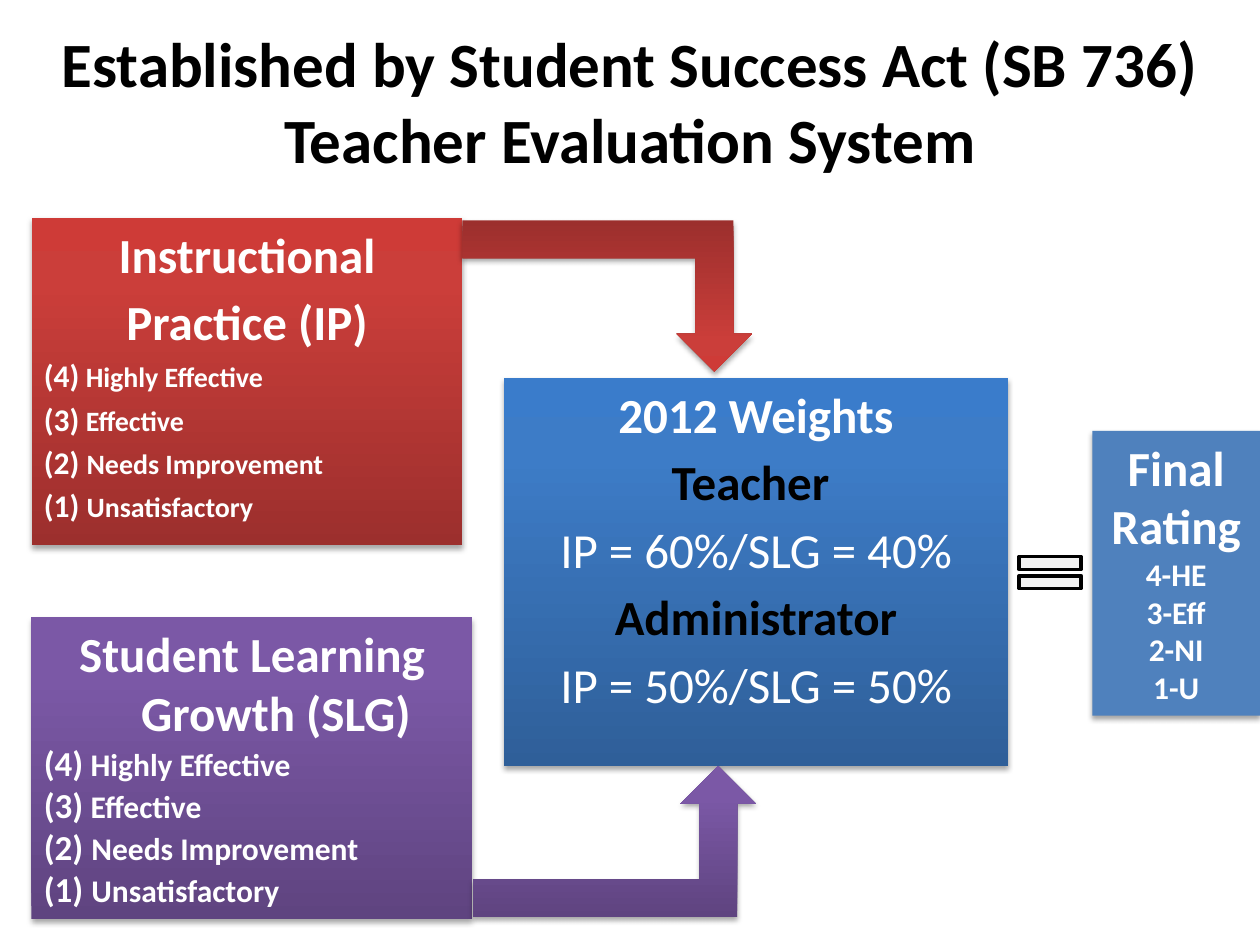
from lxml.etree import SubElement
from pptx import Presentation
from pptx.dml.color import RGBColor
from pptx.enum.shapes import MSO_SHAPE
from pptx.enum.text import MSO_ANCHOR, PP_ALIGN
from pptx.oxml.ns import qn
from pptx.util import Inches, Pt

COLORS = {
    "white": "FFFFFF",
    "black": "000000",
    "light": "F2F2F2",
    "steel": "4F81BD",
}
# Gradient stops from bottom to top
GRADIENTS = {
    "blue": ((0, "2F5F99"), (80, "3D7CC7"), (100, "3A7CCB")),
    "red": ((0, "9C2F2D"), (80, "CB3E3A"), (100, "CE3B37")),
    "purple": ((0, "5F4480"), (80, "7B58A6"), (100, "7C57A8")),
}
RATINGS = ("Highly Effective", "Effective", "Needs Improvement", "Unsatisfactory")


def color(name):
    return RGBColor.from_string(COLORS[name])


class SlideBuilder:
    font = "Calibri"
    hanging = Inches(0.38)
    spacing = 0.18  # space before, as a share of the text size

    def __init__(self, slide):
        self.slide = slide

    def run(self, paragraph, text, size, color_name="white", bold=True):
        run = paragraph.add_run()
        run.text = text
        run.font.name = self.font
        run.font.size = Pt(size)
        run.font.bold = bold
        run.font.color.rgb = color(color_name)

    def title(self, lines, left, top, width, height):
        title = self.slide.shapes.title
        title.left, title.top = Inches(left), Inches(top)
        title.width, title.height = Inches(width), Inches(height)
        title.text_frame.vertical_anchor = MSO_ANCHOR.MIDDLE
        paragraph = title.text_frame.paragraphs[0]
        paragraph.alignment = PP_ALIGN.CENTER
        for index, line in enumerate(lines):
            if index:
                paragraph.add_line_break()
            self.run(paragraph, line, 36, "black")

    def shape(self, kind, left, top, width, height, fill, outline=None):
        shape = self.slide.shapes.add_shape(
            kind, Inches(left), Inches(top), Inches(width), Inches(height))
        if fill in GRADIENTS:
            self.gradient(shape, GRADIENTS[fill])
        else:
            shape.fill.solid()
            shape.fill.fore_color.rgb = color(fill)
        shape.shadow.inherit = False
        if outline:
            shape.line.color.rgb = color(outline)
            shape.line.width = Pt(2)
        else:
            shape.line.fill.background()
            self.shadow(shape)
        return shape

    def gradient(self, shape, stops):
        shape.fill.gradient()
        shape.fill.gradient_angle = 90
        stop_list = next(shape._element.spPr.iter(qn("a:gsLst")))
        for stop in list(stop_list):
            stop_list.remove(stop)
        for position, value in stops:
            stop = SubElement(stop_list, qn("a:gs"), pos=str(position * 1000))
            SubElement(stop, qn("a:srgbClr"), val=value)

    def shadow(self, shape):
        effects = shape._element.spPr.find(qn("a:effectLst"))
        outer = SubElement(effects, qn("a:outerShdw"), blurRad=str(Pt(3.1)),
                           dist=str(Pt(1.8)), dir="5400000", rotWithShape="0")
        shade = SubElement(outer, qn("a:srgbClr"), val=COLORS["black"])
        SubElement(shade, qn("a:alpha"), val="35000")

    def box(self, left, top, width, height, fill):
        shape = self.shape(MSO_SHAPE.RECTANGLE, left, top, width, height, fill)
        shape.text_frame.word_wrap = True
        shape.text_frame.vertical_anchor = MSO_ANCHOR.TOP
        return shape.text_frame

    def arrow(self, left, top, width, height, fill, flipped=False):
        shape = self.shape(MSO_SHAPE.BENT_UP_ARROW, left, top, width, height, fill)
        if flipped:
            shape._element.spPr.xfrm.set("flipV", "1")

    def paragraph(self, frame, runs, centered=True, spaced=True, hanging=True):
        """Add a paragraph; each run is (text, size[, color[, bold]])."""
        paragraph = frame.paragraphs[0]
        if paragraph.runs:
            paragraph = frame.add_paragraph()
        paragraph.alignment = PP_ALIGN.CENTER if centered else PP_ALIGN.LEFT
        if spaced:
            paragraph.space_before = Pt(round(runs[0][1] * self.spacing, 1))
        if hanging:
            properties = paragraph._p.get_or_add_pPr()
            properties.set("marL", str(self.hanging))
            properties.set("indent", str(-self.hanging))
        for run in runs:
            self.run(paragraph, *run)

    def rating_scale(self, frame, size, indented):
        for index, rating in enumerate(RATINGS):
            number = f"({len(RATINGS) - index})"
            # The gap takes the larger size in the two lower ratings
            if index < 2:
                runs = [(number, size + 2), (" ", size, "white", index > 0)]
            else:
                runs = [(number + " ", size + 2)]
            self.paragraph(frame, runs + [(rating, size)], centered=False,
                           spaced=indented, hanging=indented)


def main():
    presentation = Presentation()
    presentation.slide_width, presentation.slide_height = Inches(10), Inches(7.5)
    builder = SlideBuilder(presentation.slides.add_slide(presentation.slide_layouts[5]))

    builder.title(("Established by Student Success Act (SB 736)",
                   "Teacher Evaluation System"), 0, 0.13, 10, 1.33)

    # Weights
    weights = builder.box(4, 3, 4, 3.08, "blue")
    for text, color_name, bold in (
        ("2012 Weights", "white", True),
        ("Teacher ", "black", True),
        ("IP = 60%/SLG = 40%", "white", False),
        ("Administrator", "black", True),
        ("IP = 50%/SLG = 50%", "white", False),
    ):
        builder.paragraph(weights, [(text, 28, color_name, bold)])

    # Instructional practice
    practice = builder.box(0.25, 1.73, 3.42, 2.6, "red")
    for text in ("Instructional", "Practice (IP)"):
        builder.paragraph(practice, [(text, 28)])
    builder.rating_scale(practice, 16, indented=True)

    # Student learning growth
    growth = builder.box(0.25, 4.9, 3.5, 2.39, "purple")
    builder.paragraph(growth, [("Student Learning Growth (SLG)", 28)])
    builder.rating_scale(growth, 18, indented=False)

    # Final rating
    final = builder.box(8.67, 3.42, 1.33, 2.26, "steel")
    for text, size in (("Final Rating", 28), ("4-HE", 18), ("3-Eff", 18),
                       ("2-NI", 18), ("1-U", 18)):
        builder.paragraph(final, [(text, size)], spaced=False, hanging=False)

    # Arrows into the weights and equal sign
    builder.arrow(3.75, 6.08, 2.25, 1.2, "purple")
    builder.arrow(3.67, 1.75, 2.3, 1.2, "red", flipped=True)
    builder.shape(MSO_SHAPE.MATH_EQUAL, 8, 4.33, 0.67, 0.43, "light", "black")

    presentation.save("out.pptx")


if __name__ == "__main__":
    main()
